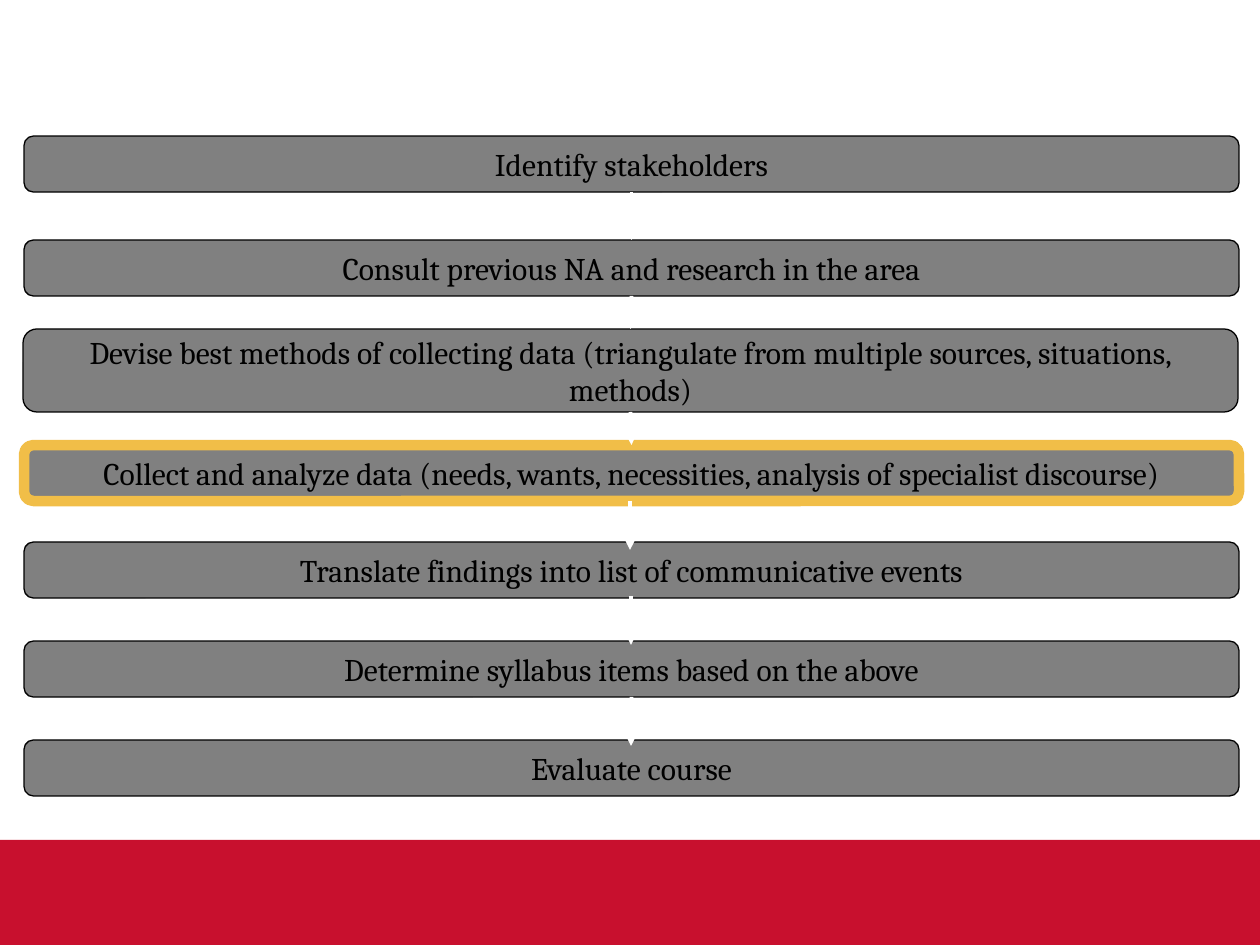
import pptx
import pptx.util
from dataclasses import dataclass
from pptx.dml.color import RGBColor
from pptx.enum.shapes import MSO_CONNECTOR, MSO_SHAPE
from pptx.enum.text import MSO_ANCHOR, PP_ALIGN
from pptx.oxml.xmlchemy import OxmlElement

EMU_PER_PX = 914400 / 126
BOTTOM, TOP = 2, 0


@dataclass(frozen=True)
class Theme:
    font: str = "Cambria"
    text_size: int = 18
    text: str = "000000"
    step_fill: str = "808080"
    outline: str = "000000"
    highlight: str = "F1BE48"
    arrow: str = "FFFFFF"
    band: str = "C8102E"
    outline_width: float = 0.75
    highlight_width: float = 6
    arrow_width: float = 2.25


def px(length):
    return pptx.util.Emu(round(length * EMU_PER_PX))


def color(value):
    return RGBColor.from_string(value)


class SlideBuilder:
    def __init__(self, slide, theme):
        self.slide = slide
        self.theme = theme

    def box(self, kind, left, top, width, height, fill):
        shape = self.slide.shapes.add_shape(
            kind, px(left), px(top), px(width), px(height))
        shape.shadow.inherit = False
        shape.fill.solid()
        shape.fill.fore_color.rgb = color(fill)
        shape.line.fill.background()
        return shape

    def step(self, text, left, top, width, height, highlighted=False):
        theme = self.theme
        shape = self.box(MSO_SHAPE.ROUNDED_RECTANGLE, left, top, width, height,
                         theme.step_fill)
        shape.line.color.rgb = color(
            theme.highlight if highlighted else theme.outline)
        shape.line.width = pptx.util.Pt(
            theme.highlight_width if highlighted else theme.outline_width)

        frame = shape.text_frame
        frame.word_wrap = True
        frame.vertical_anchor = MSO_ANCHOR.MIDDLE
        frame.margin_left = frame.margin_right = pptx.util.Inches(0.1)
        frame.margin_top = frame.margin_bottom = pptx.util.Inches(0.1)
        paragraph = frame.paragraphs[0]
        paragraph.text = text
        paragraph.alignment = PP_ALIGN.CENTER
        paragraph.font.name = theme.font
        paragraph.font.size = pptx.util.Pt(theme.text_size)
        paragraph.font.color.rgb = color(theme.text)
        return shape

    def arrow(self, x, top, bottom, source=None, target=None):
        connector = self.slide.shapes.add_connector(
            MSO_CONNECTOR.STRAIGHT, px(x), px(top), px(x), px(bottom))
        if source is not None:
            connector.begin_connect(source, BOTTOM)
        if target is not None:
            connector.end_connect(target, TOP)
        connector.line.color.rgb = color(self.theme.arrow)
        connector.line.width = pptx.util.Pt(self.theme.arrow_width)
        head = OxmlElement("a:tailEnd")
        head.set("type", "triangle")
        connector.line._get_or_add_ln().append(head)
        connector._element.spPr.append(OxmlElement("a:effectLst"))


def main():
    presentation = pptx.Presentation()
    presentation.slide_width = px(1260)
    presentation.slide_height = px(945)
    slide = presentation.slides.add_slide(presentation.slide_layouts[6])
    theme = Theme()
    builder = SlideBuilder(slide, theme)

    # Footer band
    builder.box(MSO_SHAPE.RECTANGLE, 0, 840, 1260, 105, theme.band)

    # Steps: text, left, top, height, highlighted
    steps = [
        ("Identify stakeholders", 24, 136, 56, False),
        ("Consult previous NA and research in the area", 24, 240, 56, False),
        ("Devise best methods of collecting data (triangulate from multiple "
         "sources, situations, methods)", 23, 329, 83, False),
        ("Collect and analyze data (needs, wants, necessities, analysis of "
         "specialist discourse)", 24, 445, 56, True),
        ("Translate findings into list of communicative events",
         24, 542, 56, False),
        ("Determine syllabus items based on the above", 24, 641, 56, False),
        ("Evaluate course", 24, 740, 56, False),
    ]
    shapes = [builder.step(text, left, top, 1215, height, highlighted)
              for text, left, top, height, highlighted in steps]

    # Arrows that join one step to the next
    for index in range(3):
        builder.arrow(631, steps[index][2] + steps[index][3],
                      steps[index + 1][2], shapes[index], shapes[index + 1])

    # Arrows of equal length whose tips reach into the next step
    for x, top, source in ((630, 501, None), (631, 596, None),
                           (631, 697, shapes[5])):
        builder.arrow(x, top, top + 49, source)

    presentation.save("out.pptx")


if __name__ == "__main__":
    main()
